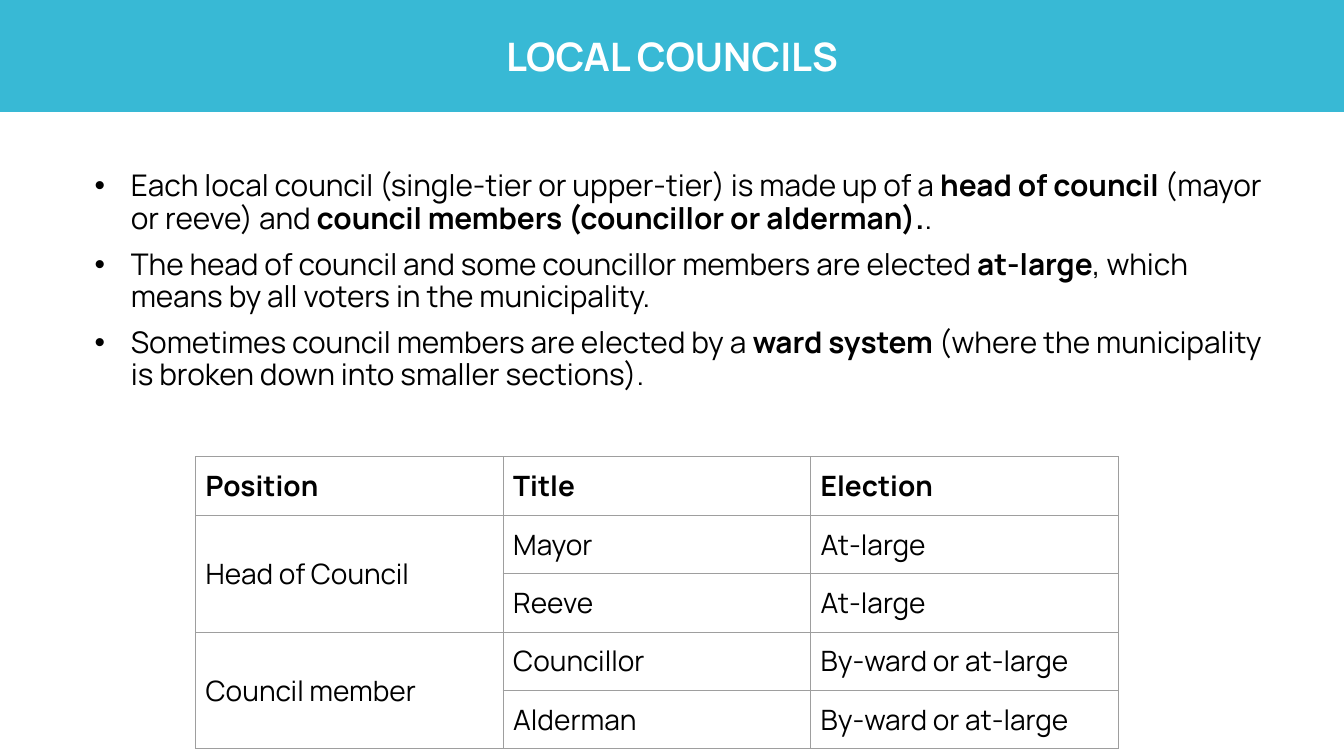
from pptx import Presentation
from pptx.dml.color import RGBColor
from pptx.enum.text import MSO_ANCHOR, MSO_AUTO_SIZE, PP_ALIGN
from pptx.oxml.ns import qn
from pptx.util import Inches, Pt
from lxml.etree import SubElement

BLUE = RGBColor(0x38, 0xB9, 0xD5)
WHITE = RGBColor(0xFF, 0xFF, 0xFF)
BLACK = RGBColor(0, 0, 0)
GREY = RGBColor(0x9E, 0x9E, 0x9E)
FONT = "Manrope"

POINTS = [
    [("Each local council (single-tier or upper-tier) is made up of a ", False),
     ("head of council ", True),
     ("(mayor or reeve) and ", False),
     ("council members (councillor or alderman).", True),
     (".", False)],
    [("The head of council and some councillor members are elected ", False),
     ("at-large", True),
     (", which means by all voters in the municipality.", False)],
    [("Sometimes council members are elected by a ", False),
     ("ward system", True),
     (" (where the municipality is broken down into smaller sections).", False)],
]
ROWS = [
    ("Position", "Title", "Election"),
    ("Head of Council", "Mayor", "At-large"),
    ("", "Reeve", "At-large"),
    ("Council member", "Councillor", "By-ward or at-large"),
    ("", "Alderman", "By-ward or at-large"),
]


def write(para, text, size=20, color=BLACK, bold=False):
    run = para.add_run()
    run.text = text
    font = run.font
    font.name, font.size, font.bold = FONT, Pt(size), bold
    font.color.rgb = color


def add_bullet(para):
    props = para._p.get_or_add_pPr()
    props.set("marL", str(Inches(0.5)))
    props.set("indent", str(Inches(-0.36)))
    color = SubElement(props, qn("a:buClr"))
    SubElement(color, qn("a:srgbClr")).set("val", str(BLACK))
    SubElement(props, qn("a:buFont")).set("typeface", "Arial")
    SubElement(props, qn("a:buChar")).set("char", "•")


def add_edges(cell):
    props = cell._tc.get_or_add_tcPr()
    for place, side in enumerate(("lnL", "lnR", "lnT", "lnB")):
        line = props.makeelement(qn("a:" + side), {"w": str(Pt(0.75))})
        fill = SubElement(line, qn("a:solidFill"))
        SubElement(fill, qn("a:srgbClr")).set("val", str(GREY))
        props.insert(place, line)


def add_title(slide, left, top, width, height):
    title = slide.shapes.title
    title.left, title.top = Inches(left), Inches(top)
    title.width, title.height = Inches(width), Inches(height)
    title.fill.solid()
    title.fill.fore_color.rgb = BLUE
    frame = title.text_frame
    frame.auto_size = MSO_AUTO_SIZE.NONE
    frame.vertical_anchor = MSO_ANCHOR.MIDDLE
    para = frame.paragraphs[0]
    para.alignment = PP_ALIGN.CENTER
    write(para, "LOCAL COUNCILS", size=28, color=WHITE, bold=True)


def add_points(slide, left, top, width, height):
    box = slide.shapes.add_textbox(
        Inches(left), Inches(top), Inches(width), Inches(height))
    frame = box.text_frame
    frame.word_wrap = True
    for index, parts in enumerate(POINTS):
        para = frame.add_paragraph() if index else frame.paragraphs[0]
        add_bullet(para)
        para.line_spacing = 0.9
        para.space_before = Pt(10 if index else 0)
        for text, bold in parts:
            write(para, text, size=21.3, bold=bold)


def add_grid(slide, left, top, width, height):
    table = slide.shapes.add_table(
        len(ROWS), len(ROWS[0]), Inches(left), Inches(top),
        Inches(width), Inches(height)).table
    table.first_row = table.horz_banding = False
    for start in (1, 3):
        table.cell(start, 0).merge(table.cell(start + 1, 0))
    for row, texts in enumerate(ROWS):
        for col, text in enumerate(texts):
            cell = table.cell(row, col)
            cell.fill.background()
            cell.margin_left = cell.margin_right = Inches(0.1)
            cell.margin_top = cell.margin_bottom = Inches(0.1)
            add_edges(cell)
            if cell.is_merge_origin:
                cell.vertical_anchor = MSO_ANCHOR.MIDDLE
            if text:
                write(cell.text_frame.paragraphs[0], text, bold=row == 0)


def main():
    deck = Presentation()
    deck.slide_width, deck.slide_height = Inches(13.33), Inches(7.5)
    slide = deck.slides.add_slide(deck.slide_layouts.get_by_name("Title Only"))
    add_title(slide, 0, 0, 13.33, 1.11)
    add_points(slide, 0.7, 1.65, 11.94, 2.6)
    add_grid(slide, 1.94, 4.53, 9.15, 2.9)
    deck.save("out.pptx")


if __name__ == "__main__":
    main()
